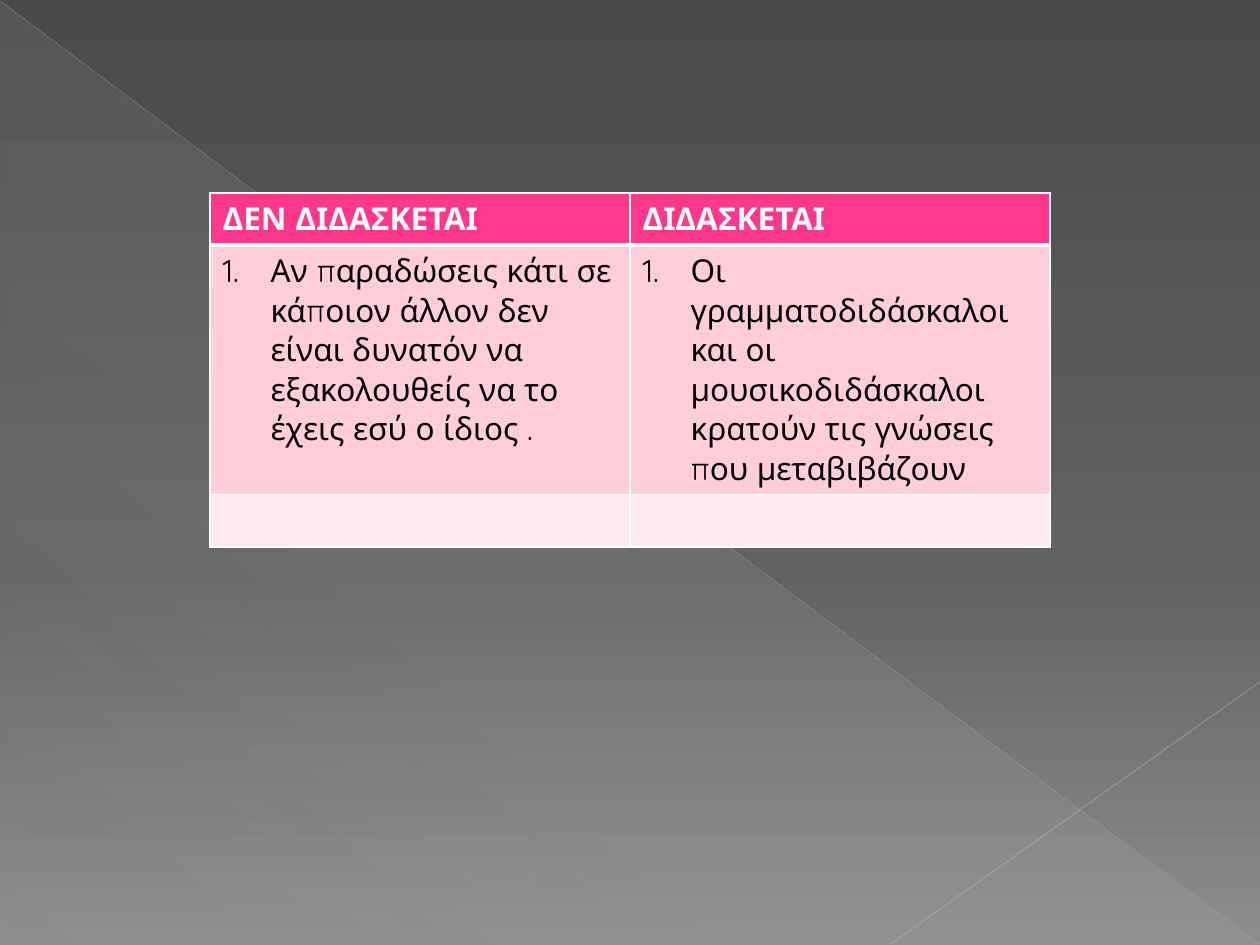
from lxml import etree
from pptx import Presentation
from pptx.dml.color import RGBColor
from pptx.enum.shapes import MSO_CONNECTOR, MSO_SHAPE
from pptx.oxml.ns import qn
from pptx.util import Emu, Pt

STRAIGHT = MSO_CONNECTOR.STRAIGHT
RIGHT_TRIANGLE = MSO_SHAPE.RIGHT_TRIANGLE
PX = 914400 // 126
FONT = "Quicksand"
WHITE = RGBColor(0xFF, 0xFF, 0xFF)
BLACK = RGBColor(0, 0, 0)
PINK = RGBColor(0xFF, 0x38, 0x8C)
LIGHT_PINK = RGBColor(0xFF, 0xCE, 0xDA)
PALE_PINK = RGBColor(0xFF, 0xE8, 0xEE)
DARK_GREY = RGBColor(0x4A, 0x4A, 0x4A)
MID_GREY = RGBColor(0x62, 0x62, 0x62)
LIGHT_GREY = RGBColor(0x8C, 0x8C, 0x8C)
VEIL = RGBColor(0xD2, 0xD2, 0xD2)
DIAGONAL = RGBColor(0xBF, 0xBF, 0xBF)
CORNER = RGBColor(0xC6, 0xC6, 0xC6)

HEADINGS = ("ΔΕΝ ΔΙΔΑΣΚΕΤΑΙ", "ΔΙΔΑΣΚΕΤΑΙ")
ARGUMENTS = (
    "Αν παραδώσεις κάτι σε κάποιον άλλον δεν είναι δυνατόν να "
    "εξακολουθείς να το έχεις εσύ ο ίδιος .",
    "Οι γραμματοδιδάσκαλοι και οι μουσικοδιδάσκαλοι κρατούν τις γνώσεις "
    "που μεταβιβάζουν",
)
ROWS = (
    (HEADINGS, 52, PINK, WHITE, True),
    (ARGUMENTS, 249, LIGHT_PINK, BLACK, False),
    (("", ""), 52, PALE_PINK, BLACK, False),
)


def px(length):
    """Turn pixels into EMU."""
    return Emu(length * PX)


def add_color(parent, color, opacity=100):
    """Append an RGB colour with its opacity in percent."""
    rgb = etree.SubElement(parent, qn("a:srgbClr"), val=str(color))
    if opacity < 100:
        etree.SubElement(rgb, qn("a:alpha"), val=str(opacity * 1000))


def set_gradient(properties, stops, angle):
    """Replace the gradient in the properties by the given stops."""
    old = properties.find(qn("a:gradFill"))
    gradient = etree.Element(qn("a:gradFill"), rotWithShape="1")
    stop_list = etree.SubElement(gradient, qn("a:gsLst"))
    for position, color, opacity in stops:
        stop = etree.SubElement(stop_list, qn("a:gs"), pos=str(position * 1000))
        add_color(stop, color, opacity)
    etree.SubElement(gradient, qn("a:lin"), ang=str(angle * 60000), scaled="0")
    properties.replace(old, gradient)


def add_hairline(slide, start, end, color, width, opacity):
    """Draw a thin translucent line without a shadow."""
    hairline = slide.shapes.add_connector(STRAIGHT, *map(px, start + end))
    hairline.line.width = Pt(width)
    hairline.line.color.rgb = color
    properties = hairline.element.spPr
    rgb = properties.find(".//" + qn("a:srgbClr"))
    etree.SubElement(rgb, qn("a:alpha"), val=str(opacity * 1000))
    etree.SubElement(properties, qn("a:effectLst"))


def add_backdrop(slide, left, top, width, height):
    """Paint the grey background, its veil and the two crossing lines."""
    slide.background.fill.gradient()
    set_gradient(
        slide.element.find(".//" + qn("p:bgPr")),
        ((0, DARK_GREY, 100), (60, MID_GREY, 100), (100, LIGHT_GREY, 100)), 90)
    veil = slide.shapes.add_shape(
        RIGHT_TRIANGLE, px(left + 1), px(top + 2), px(width - 2), px(height - 2))
    veil.shadow.inherit = False
    veil.line.fill.background()
    veil.fill.gradient()
    set_gradient(veil.element.spPr,
                 ((0, VEIL, 10), (70, VEIL, 8), (100, VEIL, 1)), 133)
    right, bottom = left + width, top + height
    add_hairline(slide, (left, top + 1), (right - 1, bottom - 1),
                 DIAGONAL, 0.39, 35)
    add_hairline(slide, (right, top + 682), (left + 891, bottom - 1),
                 CORNER, 0.47, 45)


def set_borders(cell, bottom_width):
    """Give a cell white borders, the lower one with its own width."""
    properties = cell._tc.get_or_add_tcPr()
    widths = (("L", 1), ("R", 1), ("T", 1), ("B", bottom_width))
    for index, (side, width) in enumerate(widths):
        border = etree.Element(qn("a:ln" + side), w=str(Pt(width)))
        add_color(etree.SubElement(border, qn("a:solidFill")), WHITE)
        properties.insert(index, border)


def number_paragraph(paragraph):
    """Number a paragraph with a hanging indent."""
    properties = paragraph._p.get_or_add_pPr()
    properties.set("marL", str(px(48)))
    properties.set("indent", str(px(-48)))
    numbering = etree.Element(qn("a:buAutoNum"), type="arabicPeriod")
    properties.insert(0, numbering)


def add_comparison(slide, left, top, width):
    """Place the two-column comparison table."""
    height = sum(row[1] for row in ROWS)
    comparison = slide.shapes.add_table(
        len(ROWS), len(HEADINGS), px(left), px(top), px(width), px(height)).table
    for row, (texts, row_height, fill, color, bold) in enumerate(ROWS):
        comparison.rows[row].height = px(row_height)
        for column, text in enumerate(texts):
            cell = comparison.cell(row, column)
            cell.fill.solid()
            cell.fill.fore_color.rgb = fill
            set_borders(cell, 3 if texts is HEADINGS else 1)
            cell.text = text
            paragraph = cell.text_frame.paragraphs[0]
            paragraph.font.name = FONT
            paragraph.font.size = Pt(18)
            paragraph.font.bold = bold
            paragraph.font.color.rgb = color
            if texts is ARGUMENTS:
                number_paragraph(paragraph)


def main():
    """Build the slide and save it."""
    presentation = Presentation()
    presentation.slide_width, presentation.slide_height = px(1260), px(945)
    slide = presentation.slides.add_slide(presentation.slide_layouts[6])
    add_backdrop(slide, 0, 0, 1260, 945)
    add_comparison(slide, 210, 193, 840)
    presentation.save("out.pptx")


if __name__ == "__main__":
    main()
